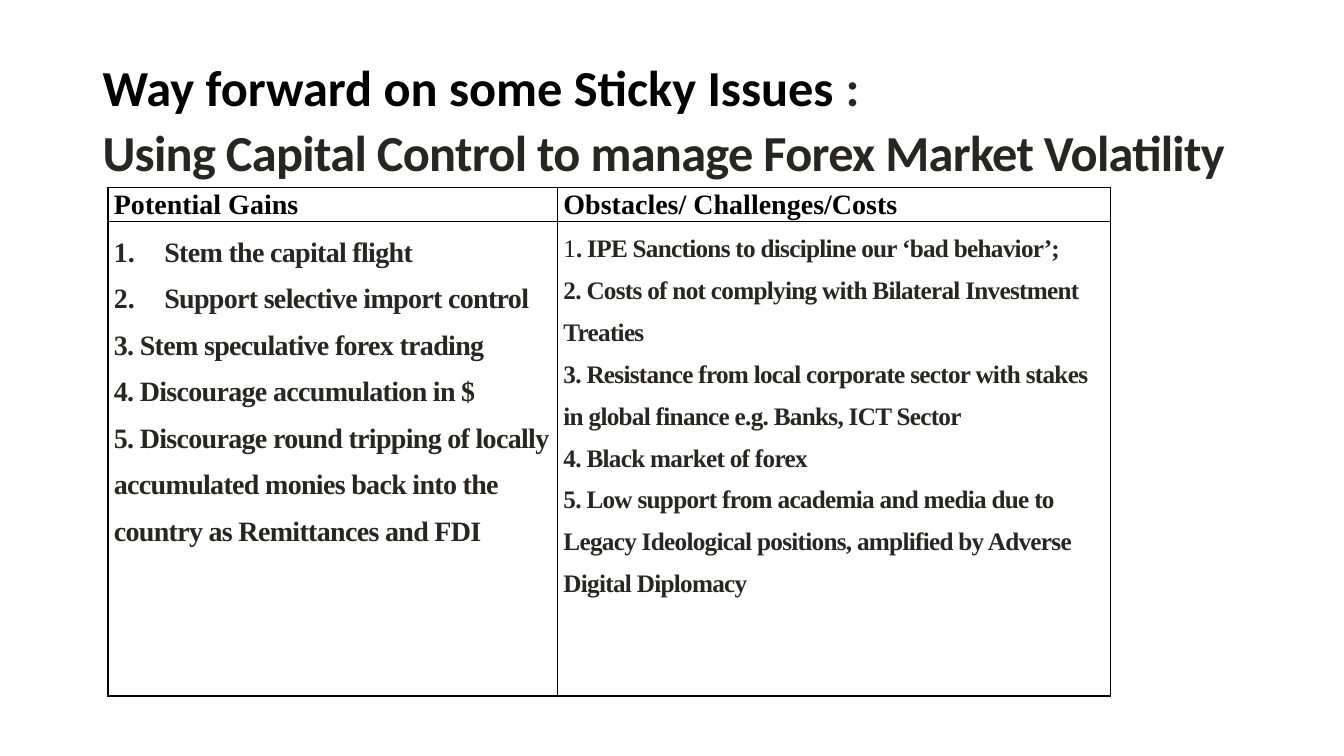
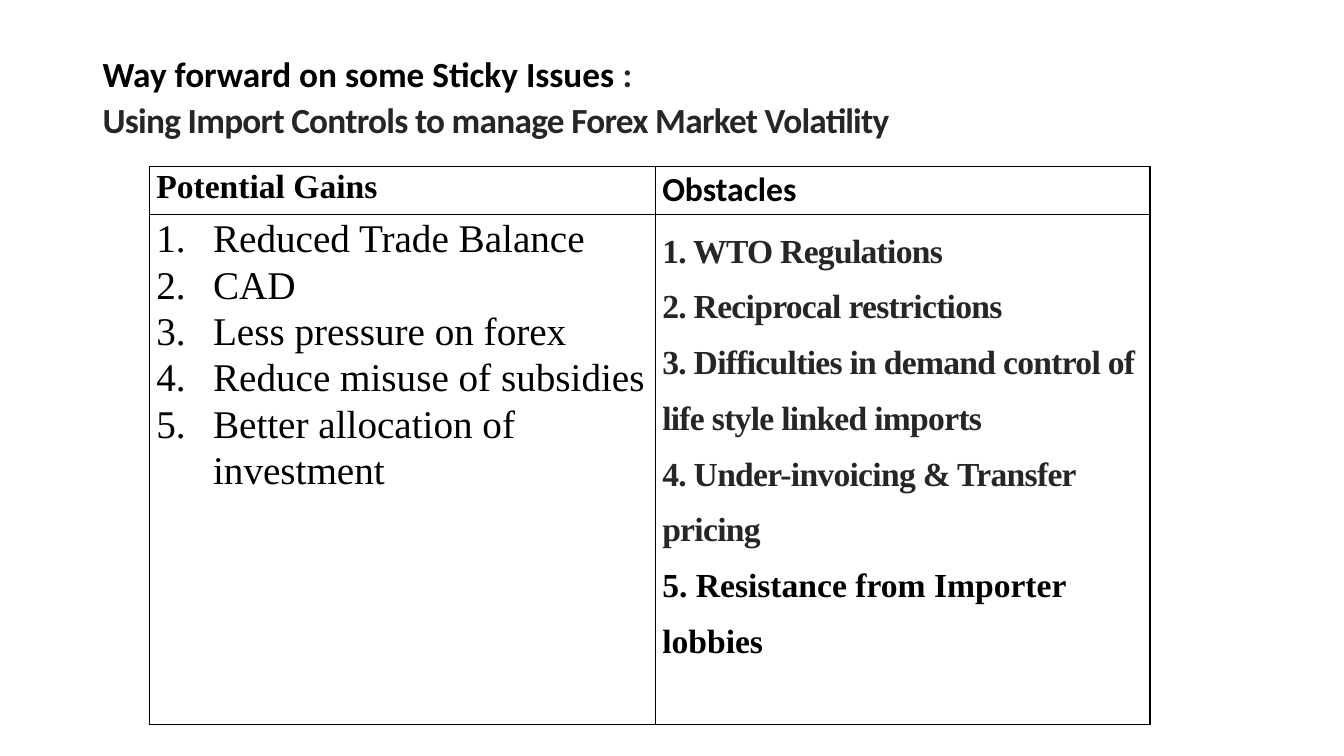
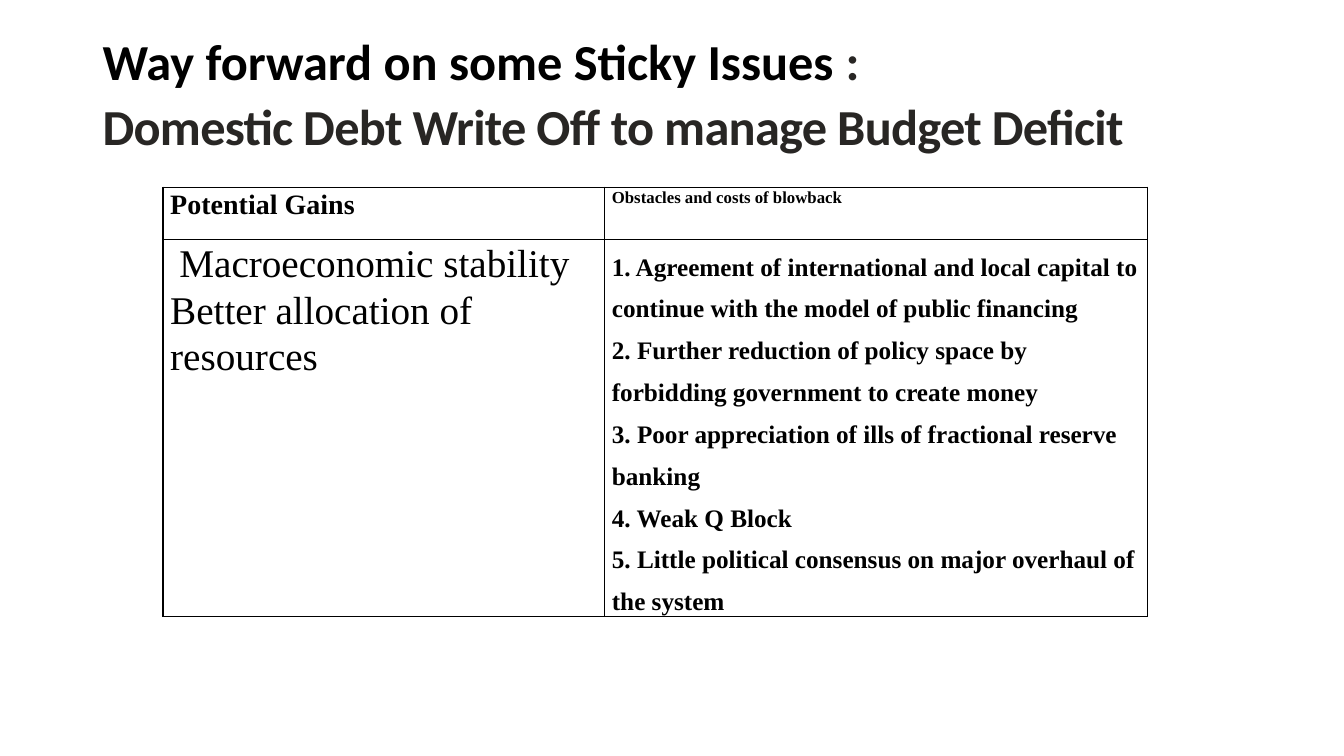
from lxml.etree import SubElement
from pptx import Presentation
from pptx.dml.color import RGBColor
from pptx.enum.text import MSO_ANCHOR as Anchor, MSO_AUTO_SIZE as AutoSize, PP_ALIGN as Align
from pptx.oxml.ns import qn
from pptx.util import Cm, Pt

BLACK = RGBColor(0x00, 0x00, 0x00)
CHARCOAL = RGBColor(0x28, 0x26, 0x24)
SANS, SERIF = "Calibri", "Times New Roman"
TIGHT = -0.5                      # letter spacing in points
SINGLE, WIDE = 1.07, 1.5          # line spacing
TITLE_LEAD = "Way forward on some Sticky Issues "
TITLE_LEFT, TITLE_WIDTH = 2.33, 29.21


def add_run(p, text, size=20, font=SERIF, color=BLACK, bold=True, tracking=0):
    r = p.add_run()
    r.text = text
    f = r.font
    f.size, f.name, f.bold = Pt(size), font, bold
    f.color.rgb = color
    if tracking:
        r._r.get_or_add_rPr().set("spc", str(int(tracking * 100)))


def indent(p, left, first, numbered=False):
    pPr = p._p.get_or_add_pPr()
    pPr.set("marL", str(Cm(left)))
    pPr.set("indent", str(Cm(first)))
    if numbered:
        SubElement(pPr, qn("a:buAutoNum"), type="arabicPeriod")


def add_title(slide, topic, top, height, size):
    sp = slide.shapes.title
    sp.left, sp.top = Cm(TITLE_LEFT), Cm(top)
    sp.width, sp.height = Cm(TITLE_WIDTH), Cm(height)
    tf = sp.text_frame
    tf.word_wrap, tf.auto_size = True, AutoSize.NONE
    tf.vertical_anchor = Anchor.MIDDLE
    p = tf.paragraphs[0]
    p.alignment, p.line_spacing, p.space_after = Align.LEFT, SINGLE, Pt(8)
    add_run(p, TITLE_LEAD, size=size, font=SANS)
    accent = dict(size=size, font=SANS, color=CHARCOAL, tracking=TIGHT)
    add_run(p, ":", **accent)
    p.add_line_break()
    add_run(p, topic, **accent)


def add_border(cell):
    tcPr = cell._tc.get_or_add_tcPr()
    for i, side in enumerate(("lnL", "lnR", "lnT", "lnB")):
        ln = SubElement(tcPr, qn("a:" + side), w=str(Pt(1)))
        fill = SubElement(ln, qn("a:solidFill"))
        SubElement(fill, qn("a:srgbClr"), val=str(BLACK))
        tcPr.insert(i, ln)


def fill_cell(cell, lines, inset, spacing=SINGLE, numbered=0, number_width=0,
              first_indent=0, **style):
    """Each line is a text, or a list of (text, style changes) runs."""
    cell.margin_left = cell.margin_right = Cm(inset)
    cell.margin_top = cell.margin_bottom = 0
    cell.fill.background()
    add_border(cell)
    tf = cell.text_frame
    for i, line in enumerate(lines):
        p = tf.add_paragraph() if i else tf.paragraphs[0]
        p.line_spacing = spacing
        if i < numbered:
            indent(p, number_width, -number_width, numbered=True)
        elif i == 0 and first_indent:
            indent(p, 0, first_indent)
        for text, changes in [(line, {})] if isinstance(line, str) else line:
            add_run(p, text, **{**style, **changes})


def add_comparison(slide, left, top, widths, heights, inset, cells):
    table = slide.shapes.add_table(len(heights), len(widths), Cm(left), Cm(top),
                                   Cm(sum(widths)), Cm(sum(heights))).table
    table.first_row = table.horz_banding = False
    for column, width in zip(table.columns, widths):
        column.width = Cm(width)
    for row, height, contents in zip(table.rows, heights, cells):
        row.height = Cm(height)
        for cell, content in zip(row.cells, contents):
            fill_cell(cell, inset=inset, **content)


CAPITAL_CONTROL = dict(
    title=dict(topic="Using Capital Control to manage Forex Market Volatility",
               top=1.1, height=3.68, size=36),
    table=dict(left=2.72, top=4.72, widths=(11.33, 13.94), heights=(0.86, 11.96), inset=0.15, cells=[
        [dict(lines=["Potential Gains"]), dict(lines=["Obstacles/ Challenges/Costs"])],
        [dict(spacing=WIDE, numbered=2, number_width=1.27, color=CHARCOAL, tracking=TIGHT, lines=[
            "Stem the capital flight",
            "Support selective import control",
            "3. Stem speculative forex trading",
            "4. Discourage accumulation in $",
            "5. Discourage round tripping of locally accumulated monies back into the "
            "country as Remittances and FDI"]),
         dict(spacing=WIDE, size=18, color=CHARCOAL, tracking=TIGHT, lines=[
             [("1", dict(bold=False)), (". IPE Sanctions to discipline our ‘bad behavior’;", {})],
             "2. Costs of not complying with Bilateral Investment Treaties",
             "3. Resistance from local corporate sector with stakes in global finance "
             "e.g. Banks, ICT Sector",
             "4. Black market of forex",
             "5. Low support from academia and media due to Legacy Ideological positions, "
             "amplified by Adverse Digital Diplomacy"])]]))

IMPORT_CONTROLS = dict(
    title=dict(topic="Using Import Controls to manage Forex Market Volatility",
               top=1.1, height=2.59, size=25.2),
    table=dict(left=3.76, top=4.19, widths=(12.75, 12.47), heights=(1.22, 12.85), inset=0.18, cells=[
        [dict(lines=["Potential Gains"], size=24), dict(lines=["Obstacles"], size=24, font=SANS)],
        [dict(size=28, bold=False, numbered=5, number_width=1.43, lines=[
            "Reduced Trade Balance",
            "CAD",
            "Less pressure on forex",
            "Reduce misuse of subsidies",
            "Better allocation of investment"]),
         dict(spacing=WIDE, size=24, color=CHARCOAL, tracking=TIGHT, lines=[
             "1. WTO Regulations",
             "2. Reciprocal restrictions",
             "3. Difficulties in demand control of life style linked imports",
             "4. Under-invoicing & Transfer pricing",
             [("5. Resistance from Importer lobbies", dict(color=BLACK, tracking=0))]])]]))

DEBT_WRITE_OFF = dict(
    title=dict(topic="Domestic Debt Write Off to manage Budget Deficit",
               top=0.81, height=2.95, size=36),
    table=dict(left=4.11, top=4.72, widths=(11.13, 13.67), heights=(1.32, 9.47), inset=0.18, cells=[
        [dict(lines=["Potential Gains"]), dict(lines=["Obstacles and costs of blowback"], size=12)],
        [dict(size=28, bold=False, first_indent=0.23, lines=[
            "Macroeconomic stability",
            "Better allocation of resources"]),
         dict(spacing=WIDE, size=18, lines=[
             "1. Agreement of international and local capital to continue with the model "
             "of public financing",
             "2. Further reduction of policy space by forbidding government to create money",
             "3. Poor appreciation of ills of fractional reserve banking",
             "4. Weak Q Block",
             "5. Little political consensus on major overhaul of the system"])]]))


def main():
    prs = Presentation()
    prs.slide_width, prs.slide_height = Cm(33.87), Cm(19.05)
    title_only = prs.slide_layouts[5]
    for issue in (CAPITAL_CONTROL, IMPORT_CONTROLS, DEBT_WRITE_OFF):
        slide = prs.slides.add_slide(title_only)
        add_title(slide, **issue["title"])
        add_comparison(slide, **issue["table"])
    prs.save("out.pptx")


if __name__ == "__main__":
    main()
